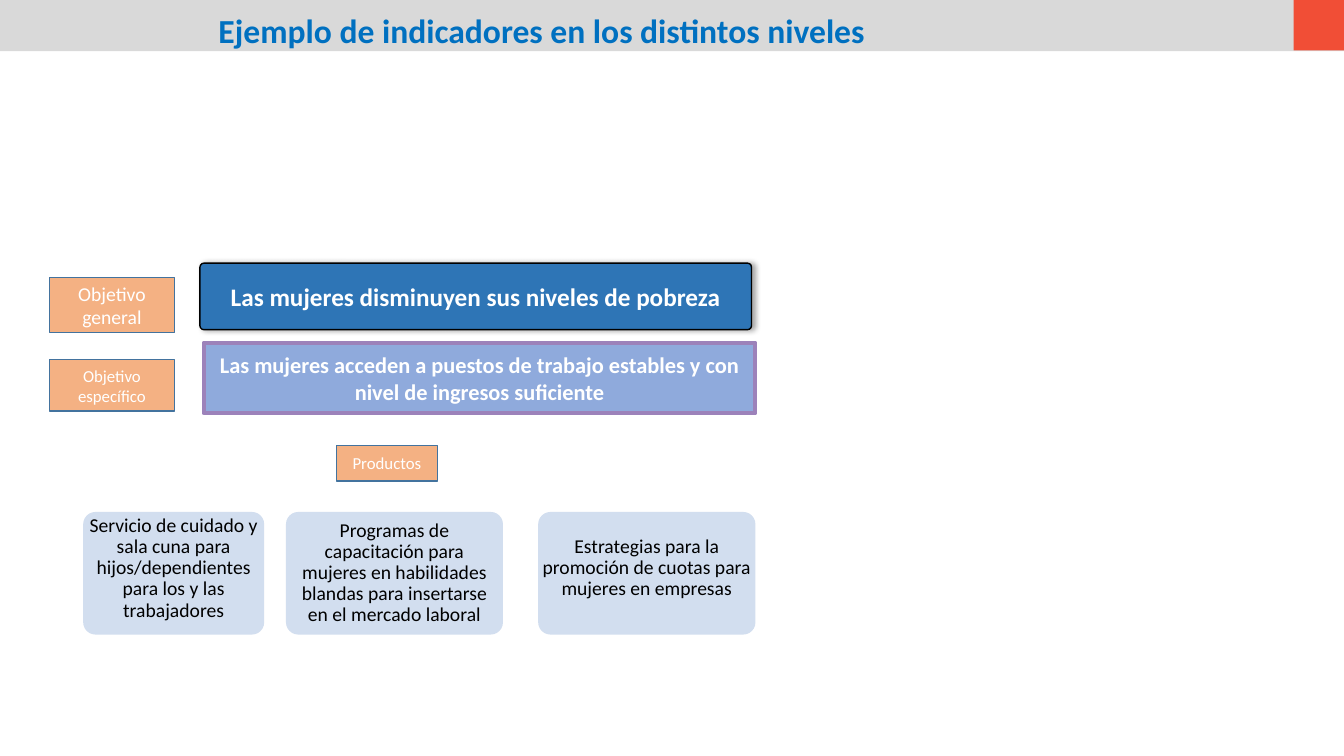
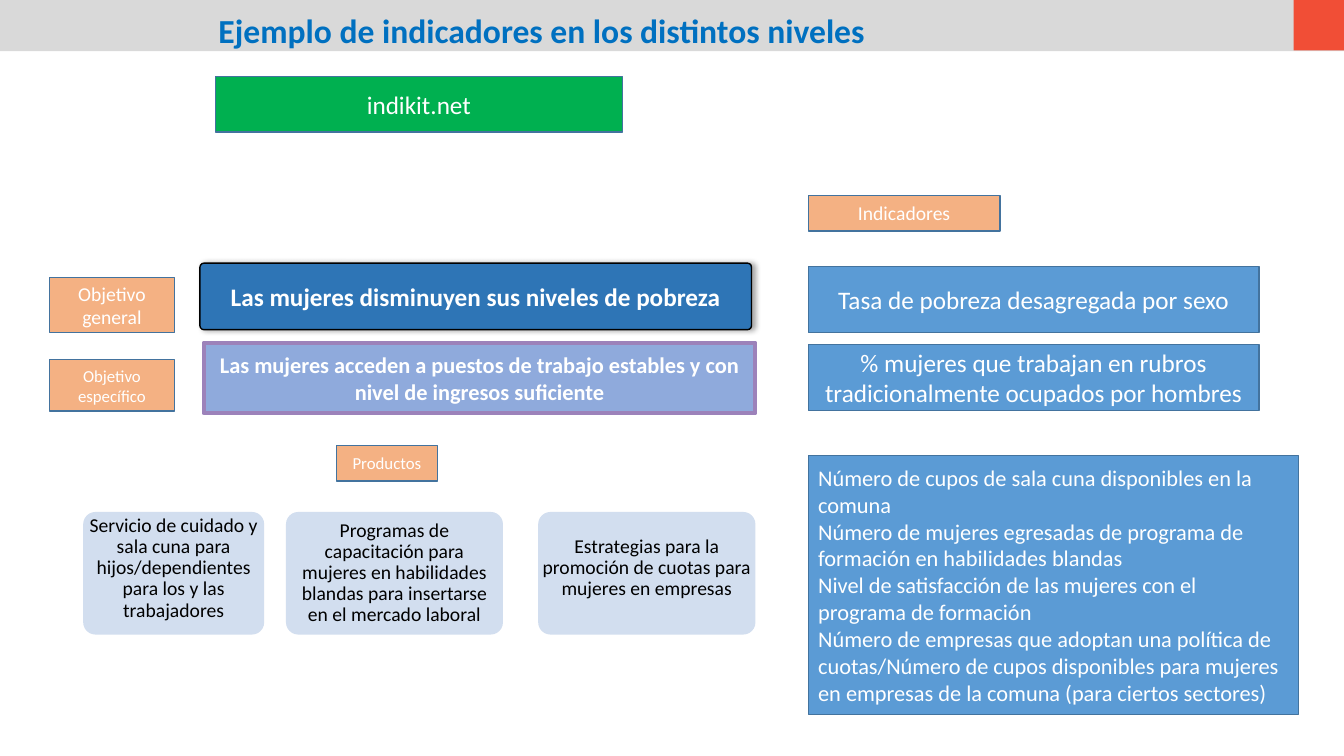
from lxml import etree
from pptx import Presentation
from pptx.dml.color import RGBColor
from pptx.enum.shapes import MSO_SHAPE
from pptx.enum.text import MSO_ANCHOR, PP_ALIGN
from pptx.oxml.ns import qn
from pptx.util import Pt

RECTANGLE = MSO_SHAPE.RECTANGLE
ROUNDED = MSO_SHAPE.ROUNDED_RECTANGLE
MIDDLE = MSO_ANCHOR.MIDDLE
TOP = MSO_ANCHOR.TOP
CENTER = PP_ALIGN.CENTER
LEFT = PP_ALIGN.LEFT

FONT = "Calibri"
WHITE = RGBColor(0xFF, 0xFF, 0xFF)
BLACK = RGBColor(0x00, 0x00, 0x00)
BAND_GREY = RGBColor(0xD9, 0xD9, 0xD9)
CORNER_RED = RGBColor(0xF1, 0x4E, 0x36)
TITLE_BLUE = RGBColor(0x00, 0x70, 0xC0)
GOAL_BLUE = RGBColor(0x2E, 0x75, 0xB6)
AIM_BLUE = RGBColor(0x8F, 0xAA, 0xDC)
AIM_PURPLE = RGBColor(0x9C, 0x82, 0xBA)
CARD_BLUE = RGBColor(0xD2, 0xDE, 0xEF)
LABEL_ORANGE = RGBColor(0xF4, 0xB1, 0x83)
INDICATOR_BLUE = RGBColor(0x5B, 0x9B, 0xD5)
LINK_GREEN = RGBColor(0x00, 0xB0, 0x50)
EDGE_BLUE = RGBColor(0x43, 0x73, 0x9E)

SLIDE_WIDTH, SLIDE_HEIGHT = 960, 540
INSETS = (7.2, 3.6, 7.2, 3.6)
INDICATOR_LEFT = 577.3

TITLE = "Ejemplo de indicadores en los distintos niveles"

# Left, top, width, height, text size, text
LEVEL_LABELS = [
    (35.2, 198.2, 89.5, 39.4, 14, "Objetivo general"),
    (35.2, 257, 89.5, 36.6, 12, "Objetivo específico"),
    (240.4, 318.2, 72, 25.3, 12, "Productos"),
]

# Left, width, side inset, bottom inset, text
PRODUCT_CARDS = [
    (59.4, 129.3, 0, 7,
     "Servicio de cuidado y sala cuna para hijos/dependientes "
     "para los y las trabajadores"),
    (204.3, 155, 4.5, 0,
     "Programas de capacitación para mujeres en habilidades blandas "
     "para insertarse en el mercado laboral"),
    (384.4, 155.2, 0, 7,
     "Estrategias para la promoción de cuotas para mujeres en empresas"),
]

# Top, text
OBJECTIVE_INDICATORS = [
    (190.3, "Tasa de pobreza desagregada por sexo"),
    (246, "% mujeres que trabajan en rubros tradicionalmente ocupados por hombres"),
]

PRODUCT_INDICATORS = [
    "Número de cupos de sala cuna disponibles en la comuna",
    "Número de mujeres egresadas de programa de formación en habilidades blandas",
    "Nivel de satisfacción de las mujeres con el programa de formación",
    "Número de empresas que adoptan una política de cuotas/Número de cupos "
    "disponibles para mujeres en empresas de la comuna (para ciertos sectores)",
]


def write(box, texts, size, color=WHITE, bold=False, align=CENTER,
          anchor=MIDDLE, insets=INSETS, spacing=None):
    """Fill a box with one paragraph per text."""
    frame = box.text_frame
    frame.word_wrap = True
    frame.vertical_anchor = anchor
    (frame.margin_left, frame.margin_top,
     frame.margin_right, frame.margin_bottom) = map(Pt, insets)
    for index, text in enumerate(texts):
        para = frame.add_paragraph() if index else frame.paragraphs[0]
        para.alignment = align
        if spacing:
            para.line_spacing = spacing
        span = para.add_run()
        span.text = text
        span.font.name = FONT
        span.font.size = Pt(size)
        span.font.bold = bold
        span.font.color.rgb = color


def add_block(page, place, fill, line=None, weight=1, kind=RECTANGLE, radius=0.1):
    box = page.shapes.add_shape(kind, *map(Pt, place))
    box.shadow.inherit = False
    box.fill.solid()
    box.fill.fore_color.rgb = fill
    if line is None:
        box.line.fill.background()
    else:
        box.line.color.rgb = line
        box.line.width = Pt(weight)
    if kind == ROUNDED:
        box.adjustments[0] = radius
    return box


def add_panel(page, place, fill, texts, size, align=CENTER):
    """Thin-edged rectangle with white text."""
    box = add_block(page, place, fill, EDGE_BLUE)
    write(box, texts, size, align=align)


def add_soft_shadow(box):
    effects = box._element.spPr.find(qn("a:effectLst"))
    shadow = etree.SubElement(effects, qn("a:outerShdw"), blurRad=str(Pt(4)),
                              dist=str(Pt(2)), dir="0", algn="ctr", rotWithShape="0")
    color = etree.SubElement(shadow, qn("a:srgbClr"), val=str(BLACK))
    etree.SubElement(color, qn("a:alpha"), val="35000")


def add_page(deck):
    """Blank page with the shared band and title."""
    page = deck.slides.add_slide(deck.slide_layouts[6])
    add_block(page, (0, 0, SLIDE_WIDTH, 36.5), BAND_GREY)
    add_block(page, (SLIDE_WIDTH - 36, 0, 36, 36), CORNER_RED)
    box = page.shapes.add_textbox(Pt(149), Pt(9.4), Pt(607), Pt(31))
    write(box, [TITLE], 24, TITLE_BLUE, bold=True, align=LEFT, anchor=TOP, spacing=0.8)
    return page


def add_objectives(page):
    # General and specific objectives
    goal = add_block(page, (142.8, 188, 394, 47.5), GOAL_BLUE, BLACK,
                     kind=ROUNDED, radius=0.06)
    add_soft_shadow(goal)
    write(goal, ["Las mujeres disminuyen sus niveles de pobreza"], 18, bold=True)
    aim = add_block(page, (145.6, 244.8, 394, 50.4), AIM_BLUE, AIM_PURPLE, 3)
    write(aim, ["Las mujeres acceden a puestos de trabajo estables y con nivel "
                "de ingresos suficiente"], 16, bold=True, insets=(1, 1, 1, 1))
    # Level labels
    for *place, size, text in LEVEL_LABELS:
        add_panel(page, place, LABEL_ORANGE, [text], size)
    # Products
    for left, width, side, bottom, text in PRODUCT_CARDS:
        card = add_block(page, (left, 365.7, width, 87.6), CARD_BLUE, kind=ROUNDED)
        write(card, [text], 14, BLACK, insets=(side, 0, side, bottom), spacing=0.9)


def add_indicators(page):
    add_panel(page, (153.8, 54.7, 290.8, 39.6), LINK_GREEN, ["indikit.net"], 18)
    add_panel(page, (INDICATOR_LEFT, 139.5, 137, 25.5), LABEL_ORANGE,
              ["Indicadores"], 14)
    for top, text in OBJECTIVE_INDICATORS:
        add_panel(page, (INDICATOR_LEFT, top, 322, 47.2), INDICATOR_BLUE, [text], 18)
    add_panel(page, (INDICATOR_LEFT, 325.4, 350.4, 184.8), INDICATOR_BLUE,
              PRODUCT_INDICATORS, 16, LEFT)


def main():
    deck = Presentation()
    deck.slide_width = Pt(SLIDE_WIDTH)
    deck.slide_height = Pt(SLIDE_HEIGHT)
    add_objectives(add_page(deck))
    page = add_page(deck)
    add_objectives(page)
    add_indicators(page)
    deck.save("out.pptx")


if __name__ == "__main__":
    main()
